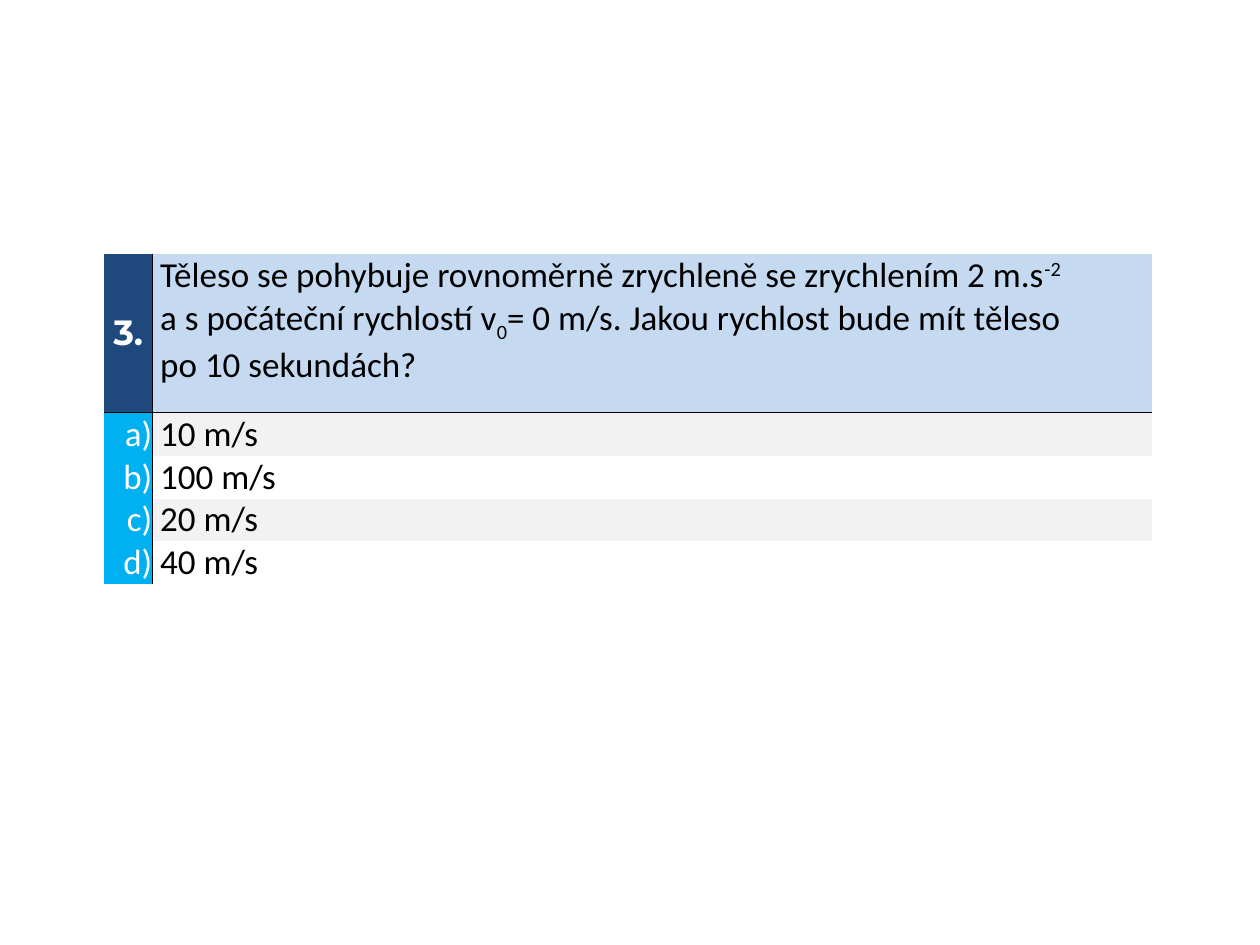
from lxml.etree import SubElement
from pptx import Presentation
from pptx.dml.color import RGBColor
from pptx.enum.text import MSO_ANCHOR as Anchor, PP_ALIGN as Align
from pptx.oxml.ns import qn
from pptx.util import Cm, Pt

BLACK, WHITE = "000000", "FFFFFF"
NAVY, PALE_BLUE, SKY_BLUE, PALE_GREY = "1F497D", "C5D9F1", "00B0F0", "F2F2F2"
TEXT_INDENT = Cm(0.16)

# Each line is a list of (text, baseline shift in percent).
QUESTION = [
    [("Těleso se pohybuje rovnoměrně zrychleně se zrychlením 2 m.s", 0), ("-2", 30)],
    [("a s počáteční rychlostí v", 0), ("0", -25),
     ("= 0 m/s. Jakou rychlost bude mít těleso", 0)],
    [("po 10 sekundách?", 0)],
]
ANSWERS = [("a)", "10 m/s"), ("b)", "100 m/s"), ("c)", "20 m/s"), ("d)", "40 m/s")]


def color(hex_string):
    return RGBColor.from_string(hex_string)


def set_borders(cell, sides):
    """Draw thin black lines on the given sides (of "LRTB") and none elsewhere."""
    properties = cell._tc.get_or_add_tcPr()
    for side in "LRTB":
        line = SubElement(properties, qn(f"a:ln{side}"), w=str(Pt(0.5)))
        if side in sides:
            fill = SubElement(line, qn("a:solidFill"))
            SubElement(fill, qn("a:srgbClr"), val=BLACK)
        else:
            SubElement(line, qn("a:noFill"))


def fill_cell(cell, lines, fill, borders, anchor, align=Align.LEFT, indent=0,
              font_color=BLACK, font_name="Calibri", bold=False):
    set_borders(cell, borders)
    if fill:
        cell.fill.solid()
        cell.fill.fore_color.rgb = color(fill)
    else:
        cell.fill.background()
    cell.margin_left = indent
    cell.margin_right = cell.margin_top = cell.margin_bottom = 0
    cell.vertical_anchor = anchor
    for index, line in enumerate(lines):
        frame = cell.text_frame
        paragraph = frame.add_paragraph() if index else frame.paragraphs[0]
        paragraph.alignment = align
        for text, shift in line:
            run = paragraph.add_run()
            run.text = text
            if shift:
                run._r.get_or_add_rPr().set("baseline", str(shift * 1000))
        font = paragraph.font
        font.name, font.size, font.bold = font_name, Pt(20), bold
        font.color.rgb = color(font_color)


def add_quiz_table(slide):
    table = slide.shapes.add_table(
        1 + len(ANSWERS), 2, Cm(2.1), Cm(5.12), Cm(21.13), Cm(6.64)).table
    table.first_row = table.horz_banding = False
    table.columns[0].width, table.columns[1].width = Cm(0.97), Cm(20.16)
    for index, row in enumerate(table.rows):
        row.height = Cm(0.86 if index else 3.2)
    return table


def fill_question(table):
    fill_cell(table.cell(0, 0), [[("3.", 0)]], NAVY, "RB", Anchor.MIDDLE, Align.CENTER,
              font_color=WHITE, font_name="Montserrat", bold=True)
    fill_cell(table.cell(0, 1), QUESTION, PALE_BLUE, "LB", Anchor.TOP, indent=TEXT_INDENT)


def fill_answers(table):
    for row, (letter, answer) in enumerate(ANSWERS, start=1):
        top = "T" if row == 1 else ""
        fill_cell(table.cell(row, 0), [[(letter, 0)]], SKY_BLUE, "R" + top,
                  Anchor.MIDDLE, Align.RIGHT, font_color=WHITE)
        fill_cell(table.cell(row, 1), [[(answer, 0)]], PALE_GREY if row % 2 else None,
                  "L" + top, Anchor.BOTTOM, indent=TEXT_INDENT)


def main():
    presentation = Presentation()
    presentation.slide_width, presentation.slide_height = Cm(25.4), Cm(19.05)
    slide = presentation.slides.add_slide(presentation.slide_layouts[6])
    table = add_quiz_table(slide)
    fill_question(table)
    fill_answers(table)
    presentation.save("out.pptx")


if __name__ == "__main__":
    main()
